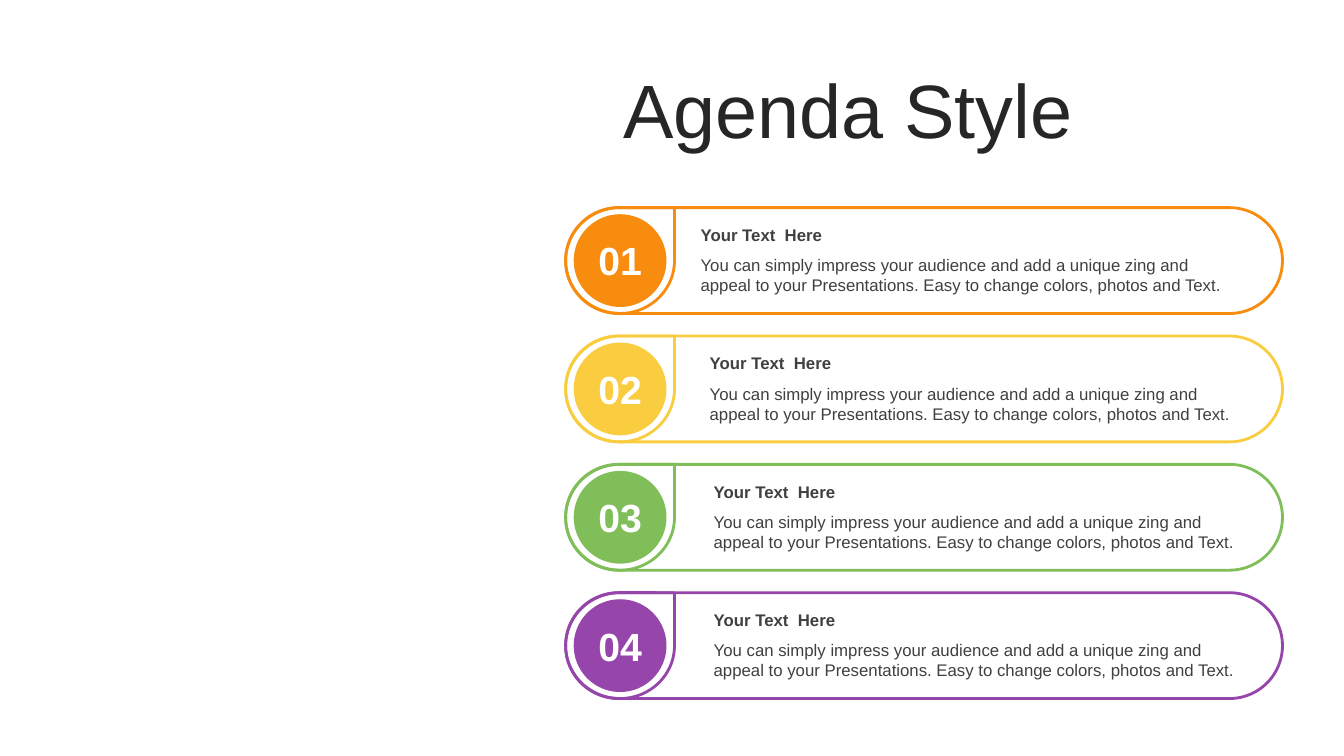
from pptx import Presentation
from pptx import util as u
from pptx.dml import color
from pptx.enum import shapes, text

FONT = "Arial"
HEADING = "Your Text  Here"
DETAIL = ("You can simply impress your audience and add a unique zing and "
          "appeal to your Presentations. Easy to change colors, photos and Text.")
AGENDA = [("01", "F78C0E", 1.24), ("02", "F9CD3F", 1.33),
          ("03", "80BE5A", 1.37), ("04", "9646AA", 1.37)]
LEFT, FIRST_TOP, LAST_TOP = 5.61, 2.06, 5.88
ROW_WIDTH, ROW_HEIGHT, BADGE_WIDTH = 7.11, 1.05, 1.08


def paint(target, value):
    """Give a fill, line or font colour format a solid hex colour."""
    target.rgb = color.RGBColor.from_string(value)


def write(frame, words, size, value, bold=False, align=text.PP_ALIGN.LEFT):
    """Write one formatted paragraph into a wrapping text frame."""
    frame.word_wrap = True
    para = frame.paragraphs[0]
    para.alignment = align
    span = para.add_run()
    span.text = words
    for name, setting in {"name": FONT, "size": u.Pt(size), "bold": bold}.items():
        setattr(span.font, name, setting)
    paint(span.font.color, value)


def add_label(parent, box, *wording, **style):
    """Add a text box at the given left, top, width and height."""
    label = parent.shapes.add_textbox(*map(u.Inches, box))
    write(label.text_frame, *wording, **style)


def add_outline(parent, kind, box, value):
    """Add an unfilled preset shape with a coloured outline."""
    outline = parent.shapes.add_shape(kind, *map(u.Inches, box))
    outline.shadow.inherit = False
    outline.fill.background()
    paint(outline.line.color, value)
    outline.line.width = u.Pt(2)
    return outline


def add_title(page, box, words):
    """Place and format the title placeholder."""
    title = page.shapes.title
    for name, length in zip(("left", "top", "width", "height"), box):
        setattr(title, name, u.Inches(length))
    title.text_frame.vertical_anchor = text.MSO_ANCHOR.MIDDLE
    write(title.text_frame, words, 54, "262626")


def add_badge(row, box, number, value):
    """Draw the teardrop, its disc and the number."""
    left, top, width, height = box
    add_outline(row, shapes.MSO_SHAPE.TEAR, box, value)
    disc = row.shapes.add_shape(shapes.MSO_SHAPE.OVAL, u.Inches(left + 0.08),
                                u.Inches(top + 0.065), u.Inches(0.92), u.Inches(0.92))
    disc.shadow.inherit = False
    disc.fill.solid()
    paint(disc.fill.fore_color, value)
    disc.line.fill.background()
    add_label(row, (left + 0.15, top + 0.24, 0.78, 0.57), number, 28, "FFFFFF",
              bold=True, align=text.PP_ALIGN.CENTER)


def add_agenda_row(page, box, number, value, indent):
    """Draw one grouped agenda row inside its box."""
    left, top, width, height = box
    row = page.shapes.add_group_shape()
    frame = add_outline(row, shapes.MSO_SHAPE.ROUNDED_RECTANGLE, box, value)
    frame.adjustments[0] = 0.5
    add_badge(row, (left, top, BADGE_WIDTH, height), number, value)
    add_label(row, (left + indent, top + 0.12, 5.45, 0.3), HEADING, 12, "404040", bold=True)
    add_label(row, (left + indent, top + 0.42, 5.45, 0.5), DETAIL, 12, "404040")


def main():
    """Build the agenda slide and save the deck."""
    deck = Presentation()
    deck.slide_width, deck.slide_height = u.Inches(13.33), u.Inches(7.5)
    page = deck.slides.add_slide(deck.slide_layouts.get_by_name("Title Only"))
    add_title(page, (6.08, 0.57, 7.25, 1.01), "Agenda Style")
    pitch = (LAST_TOP - FIRST_TOP) / (len(AGENDA) - 1)
    for index, entry in enumerate(AGENDA):
        box = (LEFT, FIRST_TOP + index * pitch, ROW_WIDTH, ROW_HEIGHT)
        add_agenda_row(page, box, *entry)
    deck.save("out.pptx")


if __name__ == "__main__":
    main()
